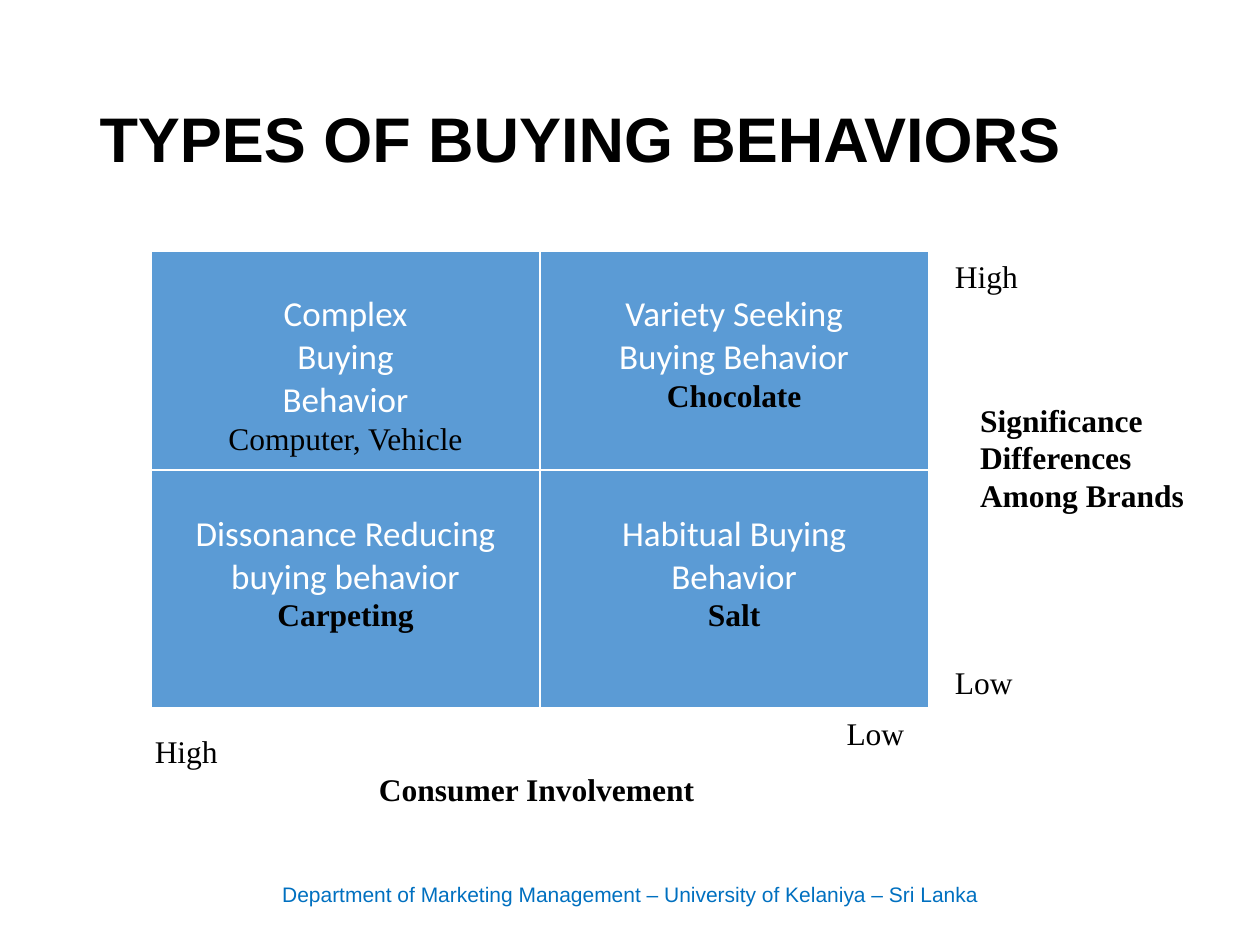
from lxml import etree
from pptx import Presentation
from pptx.dml.color import RGBColor
from pptx.enum.text import MSO_ANCHOR, MSO_AUTO_SIZE, PP_ALIGN
from pptx.oxml.ns import qn
from pptx.util import Inches, Pt

LEFT, CENTER = PP_ALIGN.LEFT, PP_ALIGN.CENTER
TOP, MIDDLE = MSO_ANCHOR.TOP, MSO_ANCHOR.MIDDLE
NO_FIT = MSO_AUTO_SIZE.NONE
TITLE_ONLY = 5
SERIF = "Times New Roman"
BLACK, WHITE, BLUE, FOOTER_BLUE = "000000", "FFFFFF", "5B9BD5", "0070C0"

BEHAVIORS = [
    [
        (["Complex", "Buying", "Behavior"], "Computer, Vehicle", False),
        (["Variety Seeking", "Buying Behavior"], "Chocolate", True),
    ],
    [
        (["Dissonance Reducing", "buying behavior"], "Carpeting", True),
        (["Habitual Buying", "Behavior"], "Salt", True),
    ],
]
LABELS = [
    ("Significance Differences Among Brands", (7.68, 3.13, 2.03, 1.01), True),
    ("Consumer Involvement", (2.91, 6.06, 2.8, 0.4), True),
    ("High", (1.13, 5.76, 1.21, 0.4), False),
    ("High", (7.48, 1.99, 1.21, 0.4), False),
    ("Low", (6.62, 5.62, 0.75, 0.4), False),
    ("Low", (7.48, 5.21, 0.75, 0.4), False),
]


def color(value):
    return RGBColor.from_string(value)


def write(para, text, font=SERIF, size=18, ink=BLACK, bold=False, align=LEFT):
    para.alignment = align
    span = para.add_run()
    span.text = text
    span.font.name = font
    span.font.size = Pt(size)
    span.font.bold = bold
    span.font.color.rgb = color(ink)


def add_title(page, bounds, text):
    title = page.shapes.title
    title.left, title.top, title.width, title.height = map(Inches, bounds)
    frame = title.text_frame
    frame.auto_size = NO_FIT
    frame.vertical_anchor = MIDDLE
    para = frame.paragraphs[0]
    para.line_spacing = 0.9
    write(para, text, font="Arial", size=36, bold=True)


def add_label(page, bounds, text, anchor=TOP, **style):
    frame = page.shapes.add_textbox(*map(Inches, bounds)).text_frame
    frame.word_wrap = True
    frame.vertical_anchor = anchor
    write(frame.paragraphs[0], text, **style)


def add_borders(cell, ink, width):
    properties = cell._tc.get_or_add_tcPr()
    for side in ("a:lnL", "a:lnR", "a:lnT", "a:lnB"):
        line = etree.SubElement(properties, qn(side), w=str(Pt(width)))
        fill = etree.SubElement(line, qn("a:solidFill"))
        etree.SubElement(fill, qn("a:srgbClr"), val=ink)


def fill_cell(cell, names, example, bold):
    add_borders(cell, WHITE, 1)
    cell.fill.solid()
    cell.fill.fore_color.rgb = color(BLUE)
    cell.margin_left = cell.margin_right = Inches(0.07)
    cell.margin_top, cell.margin_bottom = Inches(0.34), 0
    frame = cell.text_frame
    para = frame.paragraphs[0]
    for name in names:
        write(para, name, font="Calibri", size=20, ink=WHITE, align=CENTER)
        para = frame.add_paragraph()
    write(para, example, bold=bold, align=CENTER)


def add_matrix(page, bounds, row_heights):
    table = page.shapes.add_table(2, 2, *map(Inches, bounds)).table
    table.first_row = table.horz_banding = False
    for row, height, entries in zip(table.rows, row_heights, BEHAVIORS):
        row.height = Inches(height)
        for cell, entry in zip(row.cells, entries):
            fill_cell(cell, *entry)


def main():
    deck = Presentation()
    deck.slide_width, deck.slide_height = Inches(10), Inches(7.5)
    page = deck.slides.add_slide(deck.slide_layouts[TITLE_ONLY])
    add_title(page, (0.69, 0.4, 8.62, 1.45), "TYPES OF BUYING BEHAVIORS")
    add_label(page, (1.74, 6.9, 6.53, 0.4),
              "Department of Marketing Management – University of Kelaniya – Sri Lanka",
              anchor=MIDDLE, font="Arial", size=12, ink=FOOTER_BLUE, align=CENTER)
    add_matrix(page, (1.2, 1.99, 6.17, 3.63), (1.74, 1.89))
    for text, bounds, bold in LABELS:
        add_label(page, bounds, text, bold=bold)
    deck.save("out.pptx")


if __name__ == "__main__":
    main()
